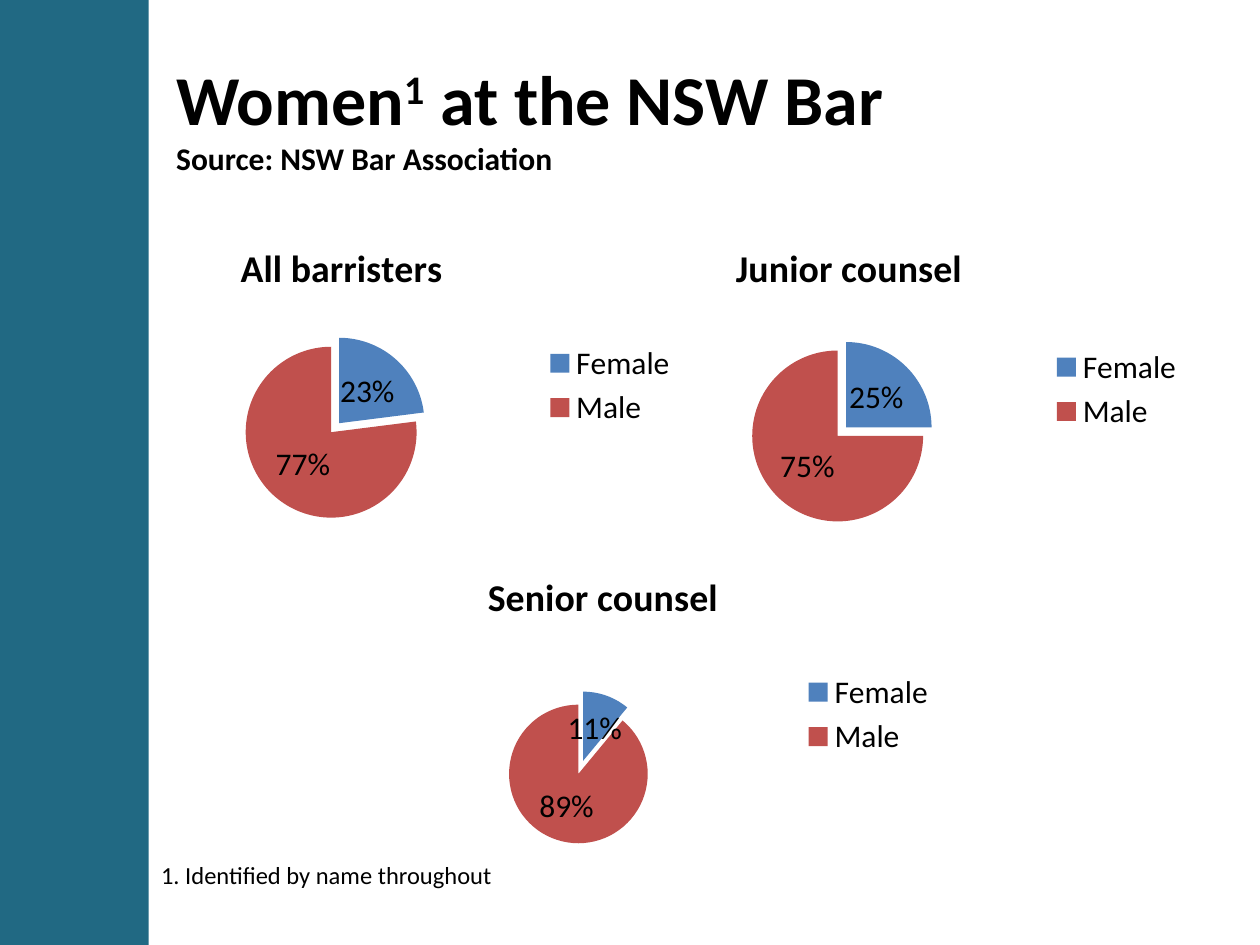
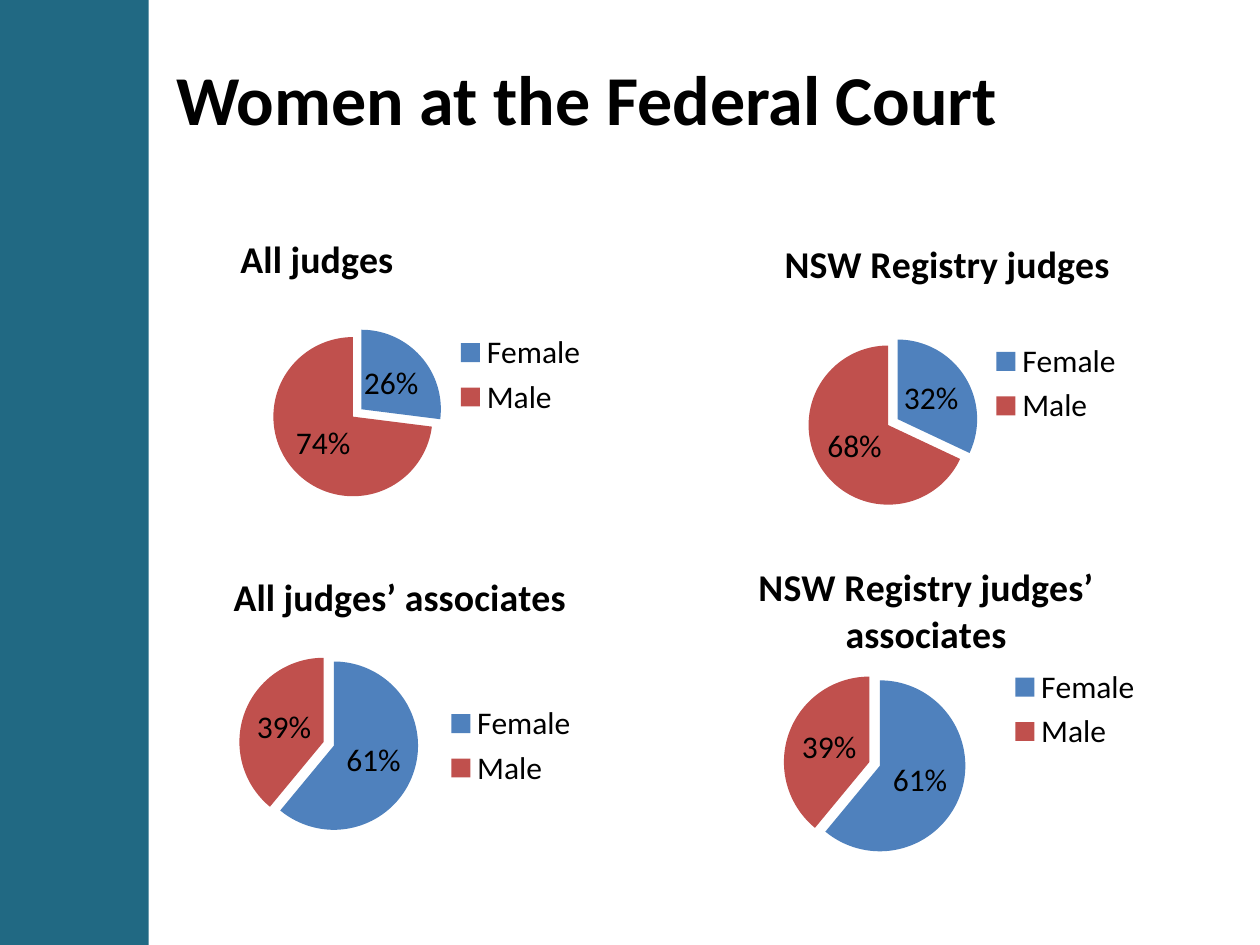
from dataclasses import dataclass

from pptx import Presentation
from pptx.chart.data import CategoryChartData as ChartData
from pptx.dml.color import RGBColor
from pptx.enum.chart import XL_CHART_TYPE as ChartType
from pptx.enum.chart import XL_LABEL_POSITION as LabelPosition
from pptx.enum.chart import XL_LEGEND_POSITION as LegendPosition
from pptx.enum.shapes import MSO_SHAPE as ShapeKind
from pptx.enum.text import MSO_ANCHOR as Anchor
from pptx.oxml.ns import qn
from pptx.oxml.xmlchemy import OxmlElement
from pptx.util import Inches, Pt


@dataclass(frozen=True)
class Theme:
    """Colours, font and type sizes shared by the slides."""

    font: str = "Calibri"
    ink: str = "000000"
    band: str = "216983"
    slices: tuple = ("4F81BD", "C0504D")
    title: float = 40
    body: float = 18
    chart_title: float = 21.6
    note: float = 14


@dataclass(frozen=True)
class Pie:
    """One pie: its frame in grid units, its inner layout in shares of the frame."""

    title: str
    values: tuple
    frame: tuple
    plot: tuple
    title_at: tuple
    explosions: tuple
    spread: int = 0
    legend_at: tuple = ()
    labels: tuple = ()
    series: str = "Series 1"


class Deck:
    """Holds the style and the current slide on a grid of 100 columns by 75 rows."""

    columns, rows = 100, 75
    categories = ("Female", "Male")

    def __init__(self, theme):
        self.theme = theme
        self.presentation = Presentation()
        self.presentation.slide_width = Inches(10)
        self.presentation.slide_height = Inches(7.5)
        self.slide = None

    def new_slide(self):
        """Start a blank slide."""
        self.slide = self.presentation.slides.add_slide(self.presentation.slide_layouts[6])

    def area(self, left, top, width, height):
        """Turn grid units into lengths."""
        column = self.presentation.slide_width / self.columns
        row = self.presentation.slide_height / self.rows
        return [round(n) for n in (left * column, top * row, width * column, height * row)]

    def style(self, font, size, bold=False):
        """Apply the shared font."""
        font.name, font.size, font.bold = self.theme.font, Pt(size), bold
        font.color.rgb = RGBColor.from_string(self.theme.ink)

    def band(self):
        """Draw the side band."""
        shape = self.slide.shapes.add_shape(ShapeKind.RECTANGLE, *self.area(0, 0, 11.8, 75))
        shape.shadow.inherit = False
        shape.fill.solid()
        shape.fill.fore_color.rgb = RGBColor.from_string(self.theme.band)
        shape.line.fill.background()

    def title(self, *pieces, source=None):
        """Write the title, raising every second piece, and a source line."""
        text_frame = self.slide.shapes.add_textbox(*self.area(13, 3, 82, 12.5)).text_frame
        text_frame.word_wrap = True
        text_frame.vertical_anchor = Anchor.TOP
        text_frame.margin_top = Inches(0.14)
        for index, piece in enumerate(pieces):
            run = text_frame.paragraphs[0].add_run()
            run.text = piece
            self.style(run.font, self.theme.title, True)
            if index % 2:
                run.font._element.set("baseline", "30000")
        if source:
            paragraph = text_frame.add_paragraph()
            paragraph.text = source
            self.style(paragraph.runs[0].font, self.theme.body, True)

    def note(self, text):
        """Write the footnote."""
        text_frame = self.slide.shapes.add_textbox(*self.area(11.8, 67.8, 28.5, 3.4)).text_frame
        text_frame.word_wrap = False
        text_frame.text = text
        self.style(text_frame.paragraphs[0].runs[0].font, self.theme.note)

    @staticmethod
    def value_element(tag, value):
        """Make an element with a val attribute."""
        element = OxmlElement(tag)
        element.set("val", str(value))
        return element

    def lay_out(self, parent, index, shares, inner=False):
        """Fix a chart part at shares of the chart frame."""
        for previous in parent.findall(qn("c:layout")):
            parent.remove(previous)
        layout, manual = OxmlElement("c:layout"), OxmlElement("c:manualLayout")
        layout.append(manual)
        if inner:
            manual.append(self.value_element("c:layoutTarget", "inner"))
        for mode in ("c:xMode", "c:yMode"):
            manual.append(self.value_element(mode, "edge"))
        for tag, share in zip(("c:x", "c:y", "c:w", "c:h"), shares):
            manual.append(self.value_element(tag, share))
        parent.insert(index, layout)

    def pie(self, pie):
        """Draw a pie chart with its title, legend and labels."""
        data = ChartData()
        data.categories = self.categories
        data.add_series(pie.series, pie.values)
        chart = self.slide.shapes.add_chart(ChartType.PIE, *self.area(*pie.frame), data).chart
        self.style(chart.font, self.theme.body)
        chart.has_title = True
        chart.chart_title.text_frame.text = pie.title
        run = chart.chart_title.text_frame.paragraphs[0].runs[0]
        self.style(run.font, self.theme.chart_title, True)
        self.lay_out(chart.chart_title._element, 1, pie.title_at)
        chart.has_legend = True
        chart.legend.position = LegendPosition.RIGHT
        chart.legend.include_in_layout = False
        self.style(chart.legend.font, self.theme.body)
        if pie.legend_at:
            self.lay_out(chart.legend._element, 1, pie.legend_at)
        plot = chart.plots[0]
        plot.vary_by_categories = True
        self.lay_out(plot._element.getparent(), 0, pie.plot, inner=True)
        self.slices(plot, pie)

    def slices(self, plot, pie):
        """Colour, pull out and label the slices."""
        series = plot.series[0]
        labels = series.data_labels
        labels.show_percentage, labels.show_value = True, False
        labels.number_format, labels.number_format_is_linked = "0%", False
        labels.position = LabelPosition.CENTER
        self.style(labels.font, self.theme.body)
        for body in labels._element.iter(qn("a:bodyPr")):
            body.set("wrap", "none")
        for index, (colour, explosion) in enumerate(zip(self.theme.slices, pie.explosions)):
            fill = series.points[index].format.fill
            fill.solid()
            fill.fore_color.rgb = RGBColor.from_string(colour)
            properties = series._element.findall(qn("c:dPt"))[index].find(qn("c:spPr"))
            properties.addprevious(self.value_element("c:explosion", explosion))
        if pie.spread:
            first_slice = series._element.find(qn("c:dPt"))
            first_slice.addprevious(self.value_element("c:explosion", pie.spread))
        for index, text in enumerate(pie.labels):
            label = series.points[index].data_label
            label.text_frame.text = text
            label.text_frame.word_wrap = False
            self.style(label.text_frame.paragraphs[0].runs[0].font, self.theme.body)
            label.position = LabelPosition.CENTER


def bar_pie(title, female, left, top, title_at, plot=(0.2, 0.38, 0.31, 0.53), explosion=14):
    """Describe a pie of the Bar slide."""
    return Pie(title, (female, 100 - female), (left, top, 44.2, 25.6), plot, title_at,
               (explosion, 0), series=title)


def judges_pie(title, female, left, top, title_at, labels=()):
    """Describe a pie of the judges row."""
    return Pie(title, (female, 100 - female), (left, top, 33.9, 25.3),
               (0.22, 0.34, 0.41, 0.57), title_at, (10, 4), spread=10, labels=labels)


BAR = (
    bar_pie("All barristers", 23, 10.6, 17.8, (0.18, 0.03)),
    bar_pie("Junior counsel", 25, 50.8, 18.1, (0.16, 0.02)),
    bar_pie("Senior counsel", 11, 31.1, 43.9, (0.16, 0.03), (0.21, 0.47, 0.25, 0.43), 20),
)
COURT = (
    judges_pie("All judges", 27, 13.8, 17.1, (0.14, 0.03), ("26%", "74%")),
    judges_pie("NSW Registry judges", 32, 56.3, 17.8, (0.16, 0.02)),
    Pie("All judges’ associates", (61, 39), (12.2, 44, 36.2, 24.3),
        (0.21, 0.35, 0.37, 0.55), (0.16, 0.03), (0, 13), legend_at=(0.63, 0.47)),
    Pie("NSW Registry judges’ associates", (61, 39), (54, 43.1, 37.7, 26.4),
        (0.24, 0.41, 0.36, 0.52), (0.15, 0.03), (0, 13)),
)


def main():
    """Build both slides."""
    deck = Deck(Theme())
    deck.new_slide()
    deck.title("Women", "1", " at the NSW Bar", source="Source: NSW Bar Association")
    for pie in BAR:
        deck.pie(pie)
    deck.band()
    deck.note("1. Identified by name throughout")
    deck.new_slide()
    deck.title("Women at the Federal Court")
    for pie in COURT:
        deck.pie(pie)
    deck.band()
    deck.presentation.save("out.pptx")


if __name__ == "__main__":
    main()
